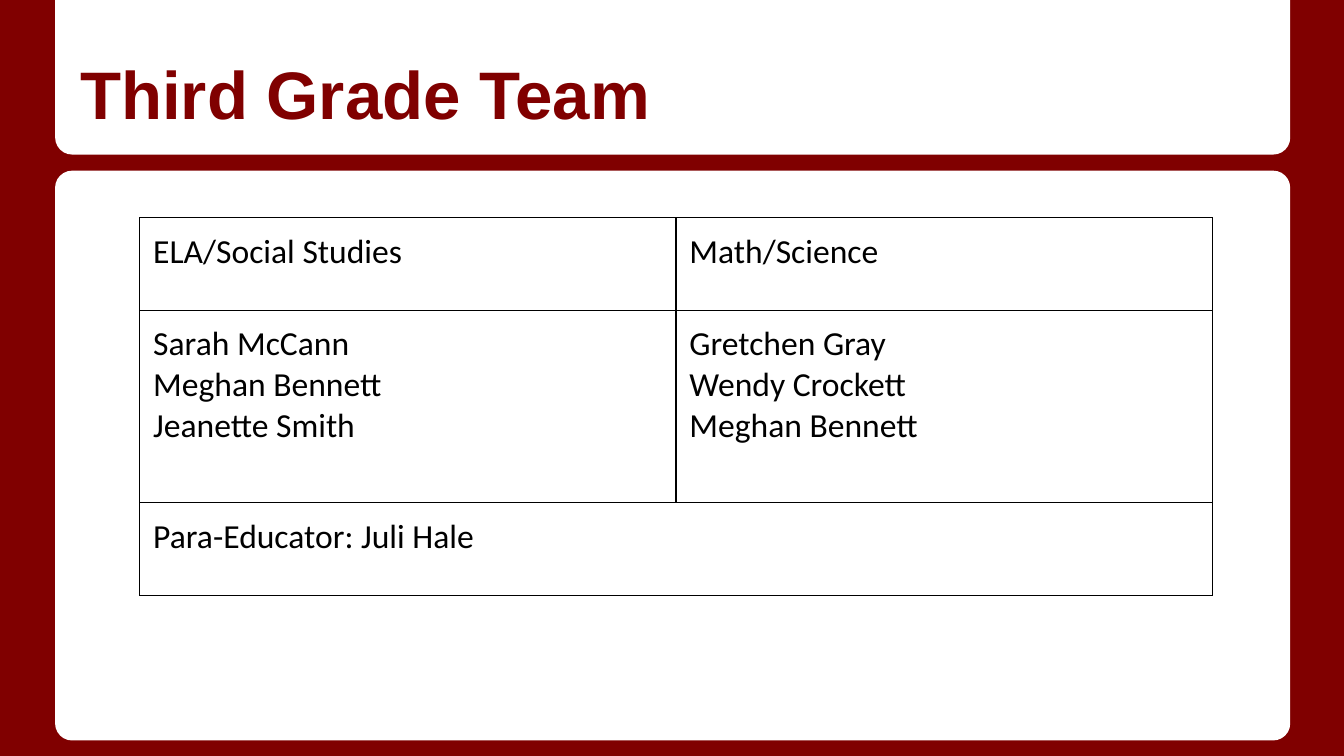
from lxml.etree import SubElement
from pptx import Presentation
from pptx.dml.color import RGBColor
from pptx.enum.shapes import MSO_SHAPE
from pptx.enum.text import MSO_ANCHOR
from pptx.oxml.ns import qn
from pptx.util import Inches, Pt

MAROON = RGBColor(0x80, 0x00, 0x00)
WHITE = RGBColor(0xFF, 0xFF, 0xFF)
BLACK = RGBColor(0x00, 0x00, 0x00)

SLIDE_WIDTH = Inches(10)
SLIDE_HEIGHT = SLIDE_WIDTH * 9 // 16
INSET = Inches(0.1)
BORDER_WIDTH = Pt(0.75)
ROW_HEIGHTS = [0.69, 1.43, 0.69]
TEAM_ROWS = [
    ["ELA/Social Studies", "Math/Science"],
    ["Sarah McCann\nMeghan Bennett\nJeanette Smith",
     "Gretchen Gray\nWendy Crockett\nMeghan Bennett"],
    ["Para-Educator: Juli Hale"],
]


def add_panel(slide, box, preset, adjustments):
    """Add a white panel with rounded corners."""
    panel = slide.shapes.add_shape(preset, *map(Inches, box))
    for index, value in enumerate(adjustments):
        panel.adjustments[index] = value
    panel.shadow.inherit = False
    panel.fill.solid()
    panel.fill.fore_color.rgb = WHITE
    panel.line.fill.background()
    return panel


def add_title(slide, box, text):
    """Add the heading, resting on the bottom of its box."""
    frame = slide.shapes.add_textbox(*map(Inches, box)).text_frame
    frame.word_wrap = True
    frame.vertical_anchor = MSO_ANCHOR.BOTTOM
    frame.margin_left = frame.margin_right = INSET
    frame.margin_top = frame.margin_bottom = INSET
    frame.text = text
    font = frame.paragraphs[0].font
    font.name, font.size, font.bold = "Arial", Pt(36), True
    font.color.rgb = MAROON


def add_borders(cell):
    """Draw a thin black line on all four sides of a cell."""
    properties = cell._tc.get_or_add_tcPr()
    for side in ("a:lnL", "a:lnR", "a:lnT", "a:lnB"):
        line = SubElement(properties, qn(side), w=str(BORDER_WIDTH))
        fill = SubElement(line, qn("a:solidFill"))
        SubElement(fill, qn("a:srgbClr"), val=str(BLACK))


def fill_cell(cell, text):
    """Write a cell's lines, one paragraph each."""
    cell.margin_left = cell.margin_right = INSET
    cell.margin_top = cell.margin_bottom = INSET
    cell.text = text
    for paragraph in cell.text_frame.paragraphs:
        font = paragraph.font
        font.name, font.size = "Calibri", Pt(18)
        font.color.rgb = BLACK


def add_team_table(slide, box):
    """Add the team table, whose last row spans both columns."""
    table = slide.shapes.add_table(
        len(TEAM_ROWS), len(TEAM_ROWS[0]), *map(Inches, box)).table
    table.first_row = table.horz_banding = False
    for row, height in zip(table.rows, ROW_HEIGHTS):
        row.height = Inches(height)
    for cell in table.iter_cells():
        add_borders(cell)
        cell.fill.background()
    for row, texts in zip(table.rows, TEAM_ROWS):
        for cell, text in zip(row.cells, texts):
            fill_cell(cell, text)
    table.cell(2, 0).merge(table.cell(2, 1))


def main():
    presentation = Presentation()
    presentation.slide_width = SLIDE_WIDTH
    presentation.slide_height = SLIDE_HEIGHT
    slide = presentation.slides.add_slide(presentation.slide_layouts[6])
    slide.background.fill.solid()
    slide.background.fill.fore_color.rgb = MAROON

    # Content panel and header panel, the latter turned to round its foot
    add_panel(slide, (0.41, 1.27, 9.19, 4.24),
              MSO_SHAPE.ROUNDED_RECTANGLE, [0.03])
    header = add_panel(slide, (0.41, 0, 9.19, 1.15),
                       MSO_SHAPE.ROUND_2_SAME_RECTANGLE, [0.11, 0])
    header.rotation = 180

    add_title(slide, (0.5, 0.15, 9, 0.94), "Third Grade Team")
    add_team_table(slide, (1.04, 1.62, 7.98, sum(ROW_HEIGHTS)))
    presentation.save("out.pptx")


if __name__ == "__main__":
    main()
